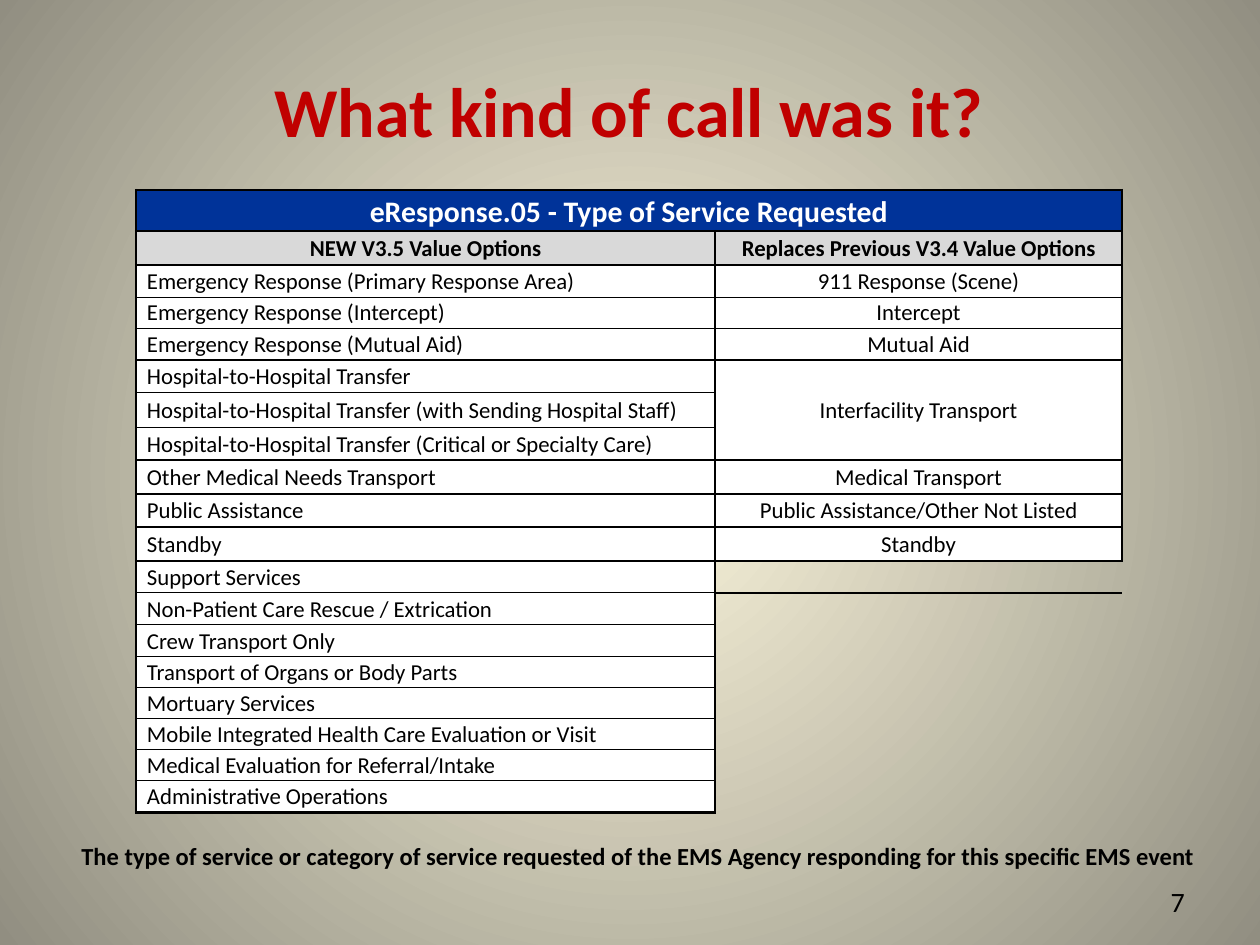
from dataclasses import dataclass
from itertools import accumulate
from lxml.etree import SubElement
from pptx import Presentation
from pptx.dml.color import RGBColor as Rgb
from pptx.enum.text import MSO_ANCHOR as Anchor, PP_ALIGN as Align
from pptx.oxml.ns import qn
from pptx.util import Emu, Pt

PX = 914400 / 126


@dataclass(frozen=True)
class Theme:
    font: str = "Calibri"
    glow: str = "FCF7DD"
    shade: str = "918E81"
    heading: str = "C00000"
    banner: str = "003399"
    header: str = "D9D9D9"
    paper: str = "FFFFFF"
    ink: str = "000000"
    heading_size: int = 40
    banner_size: int = 17
    page_size: int = 16
    note_size: int = 14
    cell_size: int = 13
    thick: float = 1.5
    thin: float = 0.5


def px(length):
    return Emu(round(length * PX))


class SlideBuilder:
    """Draws themed elements on one slide, with lengths in px."""

    def __init__(self, slide, theme):
        self.slide, self.theme = slide, theme

    def background(self):
        fill = self.slide.background.fill
        fill.gradient()
        stops = zip(fill.gradient_stops, (self.theme.glow, self.theme.shade), (0, 1))
        for stop, color, position in stops:
            stop.color.rgb = Rgb.from_string(color)
            stop.position = position
        gradient = next(self.slide.background._cSld.iter(qn("a:gradFill")))
        gradient.remove(gradient.find(qn("a:lin")))
        circle = SubElement(gradient, qn("a:path"), path="circle")
        SubElement(circle, qn("a:fillToRect"), l="50000", t="50000", r="50000", b="50000")

    def run(self, paragraph, words, size, color, bold=False):
        font_run = paragraph.add_run()
        font_run.text = words
        font = font_run.font
        font.name, font.size, font.bold = self.theme.font, Pt(size), bold
        font.color.rgb = Rgb.from_string(color)

    def text(self, box, words, size, color, bold=False, align=Align.LEFT, anchor=Anchor.TOP):
        frame = self.slide.shapes.add_textbox(*map(px, box)).text_frame
        frame.word_wrap, frame.vertical_anchor = True, anchor
        frame.paragraphs[0].alignment = align
        self.run(frame.paragraphs[0], words, size, color, bold)

    def table(self, left, top, widths, heights):
        frame = self.slide.shapes.add_table(
            len(heights), len(widths), px(left), px(top), px(sum(widths)), px(sum(heights)))
        grid = frame.table
        grid.first_row = grid.horz_banding = False
        grid._tbl.tblPr.find(qn("a:tableStyleId")).text = "{2D5ABB26-0587-4C30-8999-92F81FD0307C}"
        for column, width in zip(grid.columns, widths):
            column.width = px(width)
        for row, height in zip(grid.rows, heights):
            row.height = px(height)
        return grid

    def cell(self, cell, words, fill, borders, size=None, color=None, bold=False,
             align=Align.CENTER, anchor=Anchor.MIDDLE):
        size = size or self.theme.cell_size
        cell.margin_left = px(11 if align == Align.LEFT else 1)
        cell.margin_right = cell.margin_top = px(1)
        cell.margin_bottom = 0
        cell.vertical_anchor = anchor
        paragraph = cell.text_frame.paragraphs[0]
        paragraph.alignment = align
        if words:
            self.run(paragraph, words, size, color or self.theme.ink, bold)
        else:
            SubElement(paragraph._p, qn("a:endParaRPr"), sz=str(size * 100))
        properties = cell._tc.get_or_add_tcPr()
        for side in "LRTB":
            if side in borders:
                line = SubElement(properties, qn(f"a:ln{side}"), w=str(Pt(borders[side])))
                solid = SubElement(line, qn("a:solidFill"))
                SubElement(solid, qn("a:srgbClr"), val=self.theme.ink)
        if fill:
            cell.fill.solid()
            cell.fill.fore_color.rgb = Rgb.from_string(fill)
        else:
            cell.fill.background()


GROUPS = [
    [("Emergency Response (Primary Response Area)", "911 Response (Scene)"),
     ("Emergency Response (Intercept)", "Intercept"),
     ("Emergency Response (Mutual Aid)", "Mutual Aid")],
    [("Hospital-to-Hospital Transfer", "Interfacility Transport"),
     ("Hospital-to-Hospital Transfer (with Sending Hospital Staff)", ""),
     ("Hospital-to-Hospital Transfer (Critical or Specialty Care)", "")],
    [("Other Medical Needs Transport", "Medical Transport")],
    [("Public Assistance", "Public Assistance/Other Not Listed")],
    [("Standby", "Standby")],
    [(service, "") for service in (
        "Support Services",
        "Non-Patient Care Rescue / Extrication",
        "Crew Transport Only",
        "Transport of Organs or Body Parts",
        "Mortuary Services",
        "Mobile Integrated Health Care Evaluation or Visit",
        "Medical Evaluation for Referral/Intake",
        "Administrative Operations")],
]
ROW_HEIGHTS = [41, 34, 32, 31, 32, 33, 35, 32, 34, 33, 34, 32, 32, 32, 31, 31, 31, 31, 32]


def service_table(builder):
    theme = builder.theme
    grid = builder.table(136, 190, [579, 407], ROW_HEIGHTS)
    frame = dict.fromkeys("LRTB", theme.thick)
    grid.cell(0, 0).merge(grid.cell(0, 1))
    for column, words in enumerate(("eResponse.05 - Type of Service Requested", "")):
        builder.cell(grid.cell(0, column), words, theme.banner, frame, theme.banner_size,
                     theme.paper, True, anchor=Anchor.BOTTOM)
    headers = ("NEW V3.5 Value Options", "Replaces Previous V3.4 Value Options")
    for column, words in enumerate(headers):
        builder.cell(grid.cell(1, column), words, theme.header, frame, bold=True)

    starts = accumulate(map(len, GROUPS), initial=2)
    for start, group in zip(starts, GROUPS):
        last = len(group) - 1
        replaced = any(previous for _, previous in group)
        shared = replaced and not all(previous for _, previous in group)
        if shared:
            grid.cell(start, 1).merge(grid.cell(start + last, 1))
        for offset, (service, previous) in enumerate(group):
            borders = dict(frame, T=theme.thin if offset else theme.thick,
                           B=theme.thin if offset < last else theme.thick)
            builder.cell(grid.cell(start + offset, 0), service, theme.paper, borders,
                         align=Align.LEFT)
            if shared:
                borders = frame
            elif not replaced:
                borders = {side: theme.thick for side in ("L" if offset else "LT")}
            builder.cell(grid.cell(start + offset, 1), previous,
                         theme.paper if replaced else None, borders)


def main():
    deck = Presentation()
    deck.slide_width, deck.slide_height = px(1260), px(945)
    theme = Theme()
    builder = SlideBuilder(deck.slides.add_slide(deck.slide_layouts[6]), theme)
    builder.background()
    builder.text((903, 878, 294, 47), "7", theme.page_size, theme.ink,
                 align=Align.RIGHT, anchor=Anchor.MIDDLE)
    builder.text((62, 39, 1134, 141), "What kind of call was it?", theme.heading_size,
                 theme.heading, True, Align.CENTER, Anchor.MIDDLE)
    builder.text((69, 835, 1144, 43),
                 "The type of service or category of service requested of the EMS Agency "
                 "responding for this specific EMS event", theme.note_size, theme.ink, True)
    service_table(builder)
    deck.save("out.pptx")


if __name__ == "__main__":
    main()
